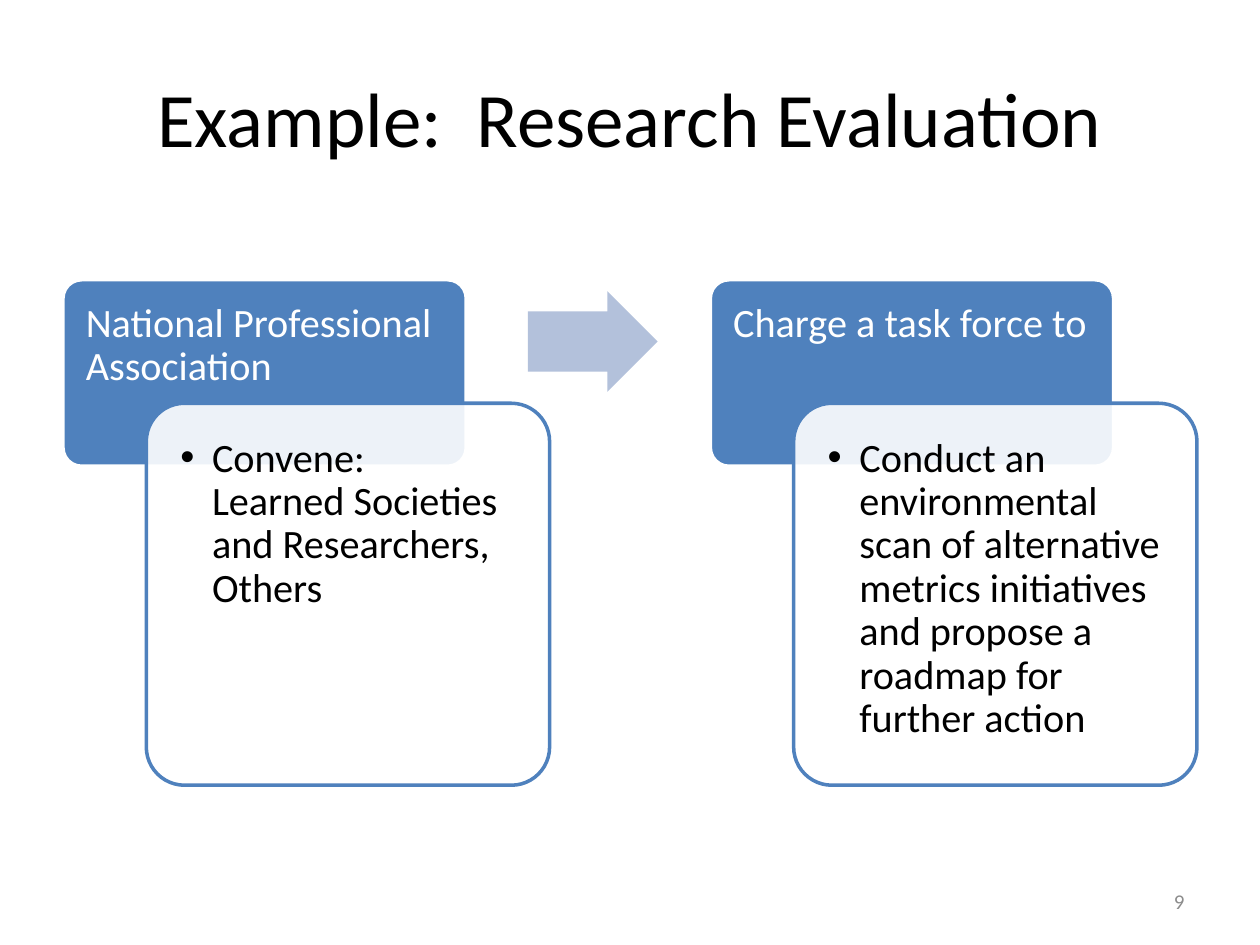
import pptx
import pptx.dml.color
import pptx.enum.shapes
import pptx.enum.text
import pptx.oxml.ns
import pptx.util
from lxml import etree

Cm, Pt = pptx.util.Cm, pptx.util.Pt
RGBColor = pptx.dml.color.RGBColor
SHAPE = pptx.enum.shapes.MSO_SHAPE
ALIGN = pptx.enum.text.PP_ALIGN
ANCHOR = pptx.enum.text.MSO_ANCHOR
qn = pptx.oxml.ns.qn

BLACK = RGBColor(0, 0, 0)
WHITE = RGBColor(0xFF, 0xFF, 0xFF)
BLUE = RGBColor(0x4F, 0x81, 0xBD)
PALE = RGBColor(0xB3, 0xC1, 0xDB)
GREY = RGBColor(0x8C, 0x8C, 0x8C)

STEPS = [
    (["National Professional Association"],
     ["Convene: ", "Learned Societies and Researchers, Others"]),
    (["Charge a task force to"],
     ["Conduct an environmental scan of alternative metrics initiatives "
      "and propose a roadmap for further action"]),
]


def write(shape, lines, size, color, align, anchor, pad=None):
    """Fill one paragraph, with a line break between the given lines."""
    frame = shape.text_frame
    frame.word_wrap = True
    frame.vertical_anchor = anchor
    if pad is not None:
        frame.margin_left = frame.margin_right = Cm(pad)
        frame.margin_top = frame.margin_bottom = Cm(pad)
    para = frame.paragraphs[0]
    para.alignment = align
    for i, line in enumerate(lines):
        if i:
            para.add_line_break()
        run = para.add_run()
        run.text = line
        run.font.name = "Calibri"
        run.font.size = Pt(size)
        run.font.color.rgb = color
    return para


def label(slide, box, text, size, color, align):
    area = slide.shapes.add_textbox(*map(Cm, box))
    write(area, [text], size, color, align, ANCHOR.MIDDLE)


def block(slide, kind, box, fill, edge=None):
    shape = slide.shapes.add_shape(kind, *map(Cm, box))
    shape.shadow.inherit = False
    shape.fill.solid()
    shape.fill.fore_color.rgb = fill
    if edge is None:
        shape.line.fill.background()
    else:
        shape.line.color.rgb = edge
        shape.line.width = Pt(2)
    return shape


def fade(shape, percent):
    """Set the opacity of a solid fill."""
    color = shape.fill._xPr.find(qn("a:solidFill"))[0]
    etree.SubElement(color, qn("a:alpha")).set("val", str(percent * 1000))


def bullet(para):
    props = para._p.get_or_add_pPr()
    props.set("marL", str(Cm(0.64)))
    props.set("indent", str(-Cm(0.64)))
    etree.SubElement(props, qn("a:buFont")).set("typeface", "Arial")
    etree.SubElement(props, qn("a:buChar")).set("char", "•")


def card(slide, box, head, body):
    """Place a heading block with a details block overlapping its corner."""
    left, top, width, height = box
    shift, drop = 1.68, 2.49
    wide = width - shift
    back = block(slide, SHAPE.ROUNDED_RECTANGLE,
                 (left, top, wide, 3.76), BLUE, WHITE)
    front = block(slide, SHAPE.ROUNDED_RECTANGLE,
                  (left + shift, top + drop, wide, height - drop), WHITE, BLUE)
    fade(front, 90)
    for shape, lines, color, pad in ((back, head, WHITE, 0.35),
                                     (front, body, BLACK, 0.46)):
        shape.adjustments[0] = 0.1
        para = write(shape, lines, 23, color, ALIGN.LEFT, ANCHOR.TOP, pad)
        para.line_spacing = 0.9
    bullet(para)


def flow(slide, box):
    """Place the cards side by side, with an arrow from each to the next."""
    left, top, width, height = box
    wide = 9.81
    pitch = (width - wide) / (len(STEPS) - 1)
    for i, (head, body) in enumerate(STEPS):
        x = left + i * pitch
        if i:
            arrow = block(slide, SHAPE.RIGHT_ARROW,
                          (x - pitch + 9.37, top + 0.23, 2.62, 2.03), PALE)
            arrow.adjustments[0] = 0.6
            arrow.adjustments[1] = 0.5
        card(slide, (x, top, wide, height), head, body)


def main():
    deck = pptx.Presentation()
    deck.slide_width, deck.slide_height = Cm(25.4), Cm(19.05)
    slide = deck.slides.add_slide(deck.slide_layouts[6])
    label(slide, (1.27, 0.76, 22.86, 3.18), "Example:  Research Evaluation",
          44, BLACK, ALIGN.CENTER)
    flow(slide, (1.27, 5.64, 22.86, 10.19))
    label(slide, (18.2, 17.66, 5.93, 1.01), "9", 12, GREY, ALIGN.RIGHT)
    deck.save("out.pptx")


if __name__ == "__main__":
    main()
